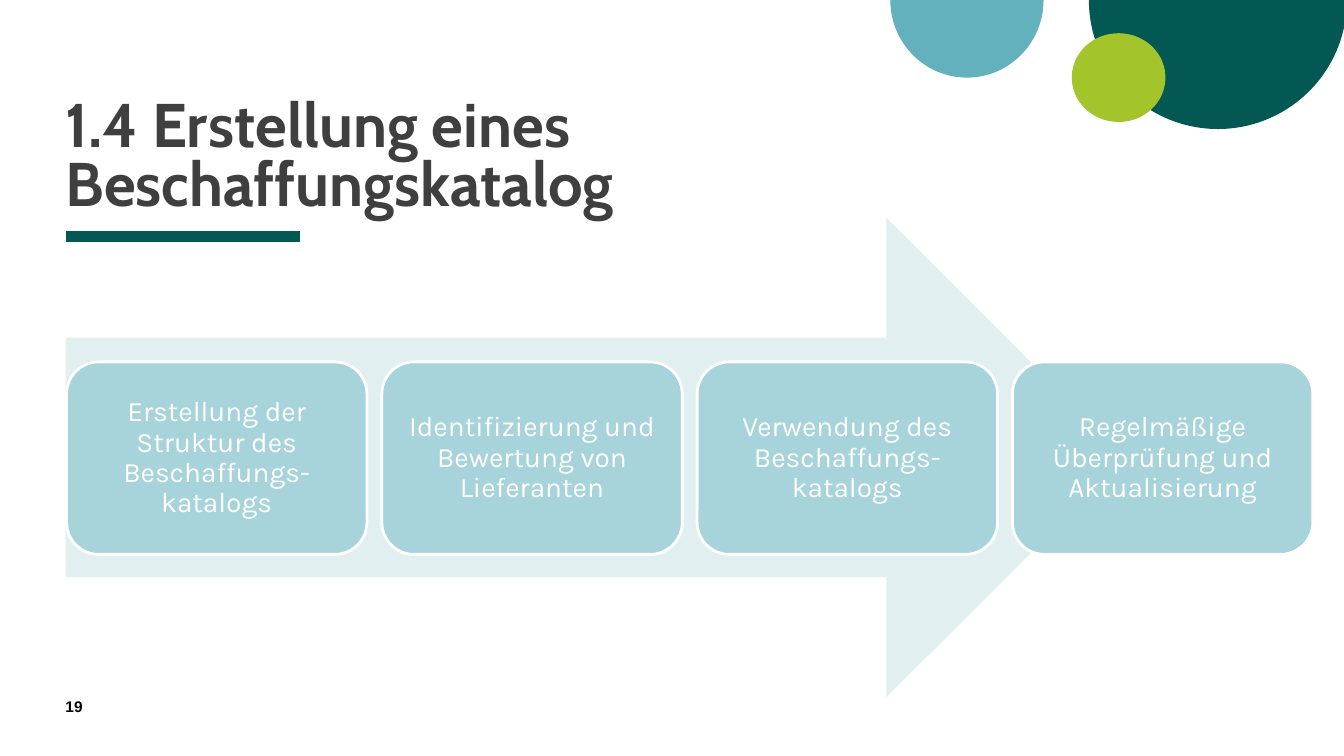
import pptx
import pptx.dml.color
import pptx.enum.shapes
import pptx.enum.text
import pptx.oxml
import pptx.util
from pptx.util import Inches

SHAPES = pptx.enum.shapes.MSO_SHAPE
ANCHOR = pptx.enum.text.MSO_ANCHOR

presentation = pptx.Presentation()
presentation.slide_width = Inches(13.33)
presentation.slide_height = Inches(7.5)
slide = presentation.slides.add_slide(presentation.slide_layouts[6])


def add_filled(kind, left, top, width, height, color):
    shape = slide.shapes.add_shape(
        kind, Inches(left), Inches(top), Inches(width), Inches(height))
    shape.shadow.inherit = False
    shape.fill.solid()
    shape.fill.fore_color.rgb = pptx.dml.color.RGBColor.from_string(color)
    shape.line.fill.background()
    return shape


def write(shape, text, font_name, size, color, bold=False, margin=0, spacing=1.0):
    frame = shape.text_frame
    frame.word_wrap = True
    frame.margin_left = frame.margin_right = Inches(margin)
    frame.margin_top = frame.margin_bottom = Inches(margin)
    paragraph = frame.paragraphs[0]
    paragraph.text = text
    paragraph.line_spacing = spacing
    paragraph.font.name = font_name
    paragraph.font.size = pptx.util.Pt(size)
    paragraph.font.bold = bold
    paragraph.font.color.rgb = pptx.dml.color.RGBColor.from_string(color)
    return frame


# Corner decoration: two lower half discs and a circle
for left, top, width, height, color in (
        (10.8, -1.28, 2.56, 2.56, "035854"),
        (8.83, -0.77, 1.52, 1.54, "64B1BE")):
    half_disc = add_filled(SHAPES.PIE, left, top, width, height, color)
    half_disc.adjustments[0] = 0
    half_disc.adjustments[1] = 108  # 180 degrees
add_filled(SHAPES.OVAL, 10.63, 0.33, 0.93, 0.88, "A3C42A")

# Title with its rule
title = slide.shapes.add_textbox(Inches(0.65), Inches(1.02), Inches(7.42), Inches(1.74))
title_frame = write(title, "1.4 Erstellung eines Beschaffungskatalog",
                    "Cabin", 44, "3F3F3F", bold=True, spacing=0.8)
title_frame.vertical_anchor = ANCHOR.BOTTOM
title_frame.margin_bottom = Inches(0.59)

rule = slide.shapes.add_connector(
    pptx.enum.shapes.MSO_CONNECTOR.STRAIGHT,
    Inches(0.65), Inches(2.35), Inches(2.98), Inches(2.35))
rule.line.width = pptx.util.Pt(8)
rule.line.color.rgb = pptx.dml.color.RGBColor.from_string("035854")
rule._element.spPr.append(pptx.oxml.parse_xml(
    '<a:effectLst xmlns:a="http://schemas.openxmlformats.org/drawingml/2006/main"/>'))

# Slide number
number = slide.shapes.add_textbox(Inches(0.65), Inches(6.92), Inches(0.57), Inches(0.27))
write(number, "19", "Arial", 11, "000000", bold=True)

# Process arrow with its steps
add_filled(SHAPES.RIGHT_ARROW, 0.65, 2.16, 10.52, 4.76, "E1EFF1")
steps = (
    "Erstellung der Struktur des Beschaffungs-\vkatalogs",
    "Identifizierung und Bewertung von Lieferanten",
    "Verwendung des Beschaffungs-\vkatalogs",
    "Regelmäßige Überprüfung und Aktualisierung",
)
for index, text in enumerate(steps):
    step = add_filled(SHAPES.ROUNDED_RECTANGLE,
                      0.66 + 3.127 * index, 3.59, 2.98, 1.91, "A7D3DA")
    step.line.width = pptx.util.Pt(2)
    step.line.color.rgb = pptx.dml.color.RGBColor.from_string("FFFFFF")
    step_frame = write(step, text, "Karla", 20, "FFFFFF", margin=0.08, spacing=0.9)
    step_frame.vertical_anchor = ANCHOR.MIDDLE
    step_frame.paragraphs[0].alignment = pptx.enum.text.PP_ALIGN.CENTER

presentation.save("out.pptx")
